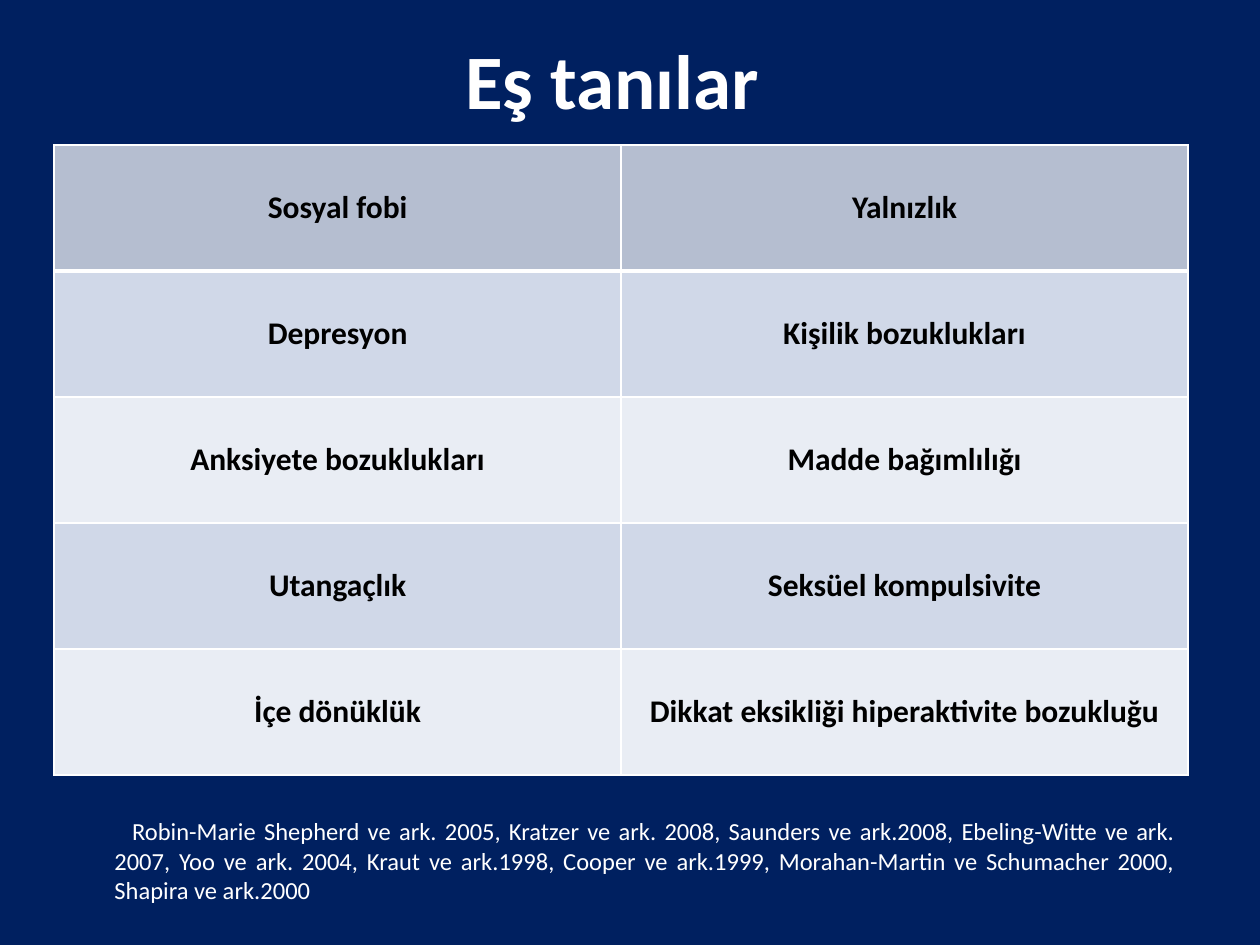
from dataclasses import dataclass

from lxml import etree
from pptx import Presentation
from pptx.dml.color import RGBColor
from pptx.enum import text
from pptx.oxml import ns
from pptx.slide import Slide
from pptx.util import Inches, Length, Pt

NAVY = RGBColor(0x00, 0x20, 0x60)
WHITE = RGBColor(0xFF, 0xFF, 0xFF)
BLACK = RGBColor(0x00, 0x00, 0x00)
BANDS = (RGBColor(0xE9, 0xED, 0xF4), RGBColor(0xD0, 0xD8, 0xE8))
FONT = "Calibri"
ALIGN = text.PP_ALIGN
MIDDLE = text.MSO_ANCHOR.MIDDLE

WIDE, HIGH = 10, 7.5
LEFT, SPAN = 0.043 * WIDE, 0.9 * WIDE
TOP, ROW = 1.15, 1

PAIRS = (
    ("Sosyal fobi", "Yalnızlık"),
    ("Depresyon", "Kişilik bozuklukları"),
    ("Anksiyete bozuklukları", "Madde bağımlılığı"),
    ("Utangaçlık", "Seksüel kompulsivite"),
    ("İçe dönüklük", "Dikkat eksikliği hiperaktivite bozukluğu"),
)
SOURCES = (
    "Robin-Marie Shepherd ve ark. 2005, Kratzer ve ark. 2008, "
    "Saunders ve ark.2008, Ebeling-Witte ve ark. 2007, Yoo ve ark. 2004, "
    "Kraut ve ark.1998, Cooper ve ark.1999, "
    "Morahan-Martin ve Schumacher 2000, Shapira ve ark.2000"
)


@dataclass(frozen=True)
class Style:
    size: int
    color: RGBColor
    bold: bool = False
    align: ALIGN = ALIGN.CENTER


@dataclass(frozen=True)
class Block:
    words: str
    top: float
    high: float
    style: Style
    anchor: text.MSO_ANCHOR = text.MSO_ANCHOR.TOP
    margin: float = 0
    indent: float = 0


TITLE = Block("Eş tanılar ", 0, HIGH / 6, Style(44, WHITE, True), MIDDLE)
NOTE = Block(SOURCES, 6.43, HIGH - 6.43, Style(14, WHITE, align=ALIGN.JUSTIFY),
             margin=0.38, indent=0.14)
LABEL = Style(18, BLACK, True)


def write(frame, words: str, style: Style):
    frame.text = words
    par = frame.paragraphs[0]
    par.alignment = style.align
    font = par.font
    font.name, font.size, font.bold = FONT, Pt(style.size), style.bold
    font.color.rgb = style.color
    return par


def place(slide: Slide, block: Block) -> None:
    box = slide.shapes.add_textbox(
        *map(Inches, (LEFT, block.top, SPAN, block.high)))
    frame = box.text_frame
    frame.word_wrap = True
    frame.vertical_anchor = block.anchor
    par = write(frame, block.words, block.style)
    props = par._p.get_or_add_pPr()
    props.set("marL", str(Inches(block.margin)))
    props.set("indent", str(Inches(block.indent)))


def edge(cell, side: str, width: Length) -> None:
    line = etree.Element(ns.qn(f"a:ln{side}"), w=str(width))
    fill = etree.SubElement(line, ns.qn("a:solidFill"))
    etree.SubElement(fill, ns.qn("a:srgbClr"), val=str(WHITE))
    cell._tc.get_or_add_tcPr().append(line)


def paint(cell, row: int) -> None:
    for side in "LRTB":
        thick = (row, side) in ((0, "B"), (1, "T"))
        edge(cell, side, Pt(3 if thick else 1))
    cell.fill.solid()
    cell.fill.fore_color.rgb = BANDS[row % 2] if row else WHITE
    if row == 0:
        tint = cell._tc.tcPr.find(".//" + ns.qn("a:solidFill") + "[last()]")
        tint = cell._tc.tcPr.find(ns.qn("a:solidFill"))[0]
        etree.SubElement(tint, ns.qn("a:alpha"), val="71000")


def grid(slide: Slide) -> None:
    rows, cols = len(PAIRS), len(PAIRS[0])
    table = slide.shapes.add_table(
        rows, cols, *map(Inches, (LEFT, TOP, SPAN, ROW * rows))).table
    for row, pair in enumerate(PAIRS):
        for col, words in enumerate(pair):
            cell = table.cell(row, col)
            cell.vertical_anchor = MIDDLE
            write(cell.text_frame, words, LABEL)
            paint(cell, row)


def main() -> None:
    deck = Presentation()
    deck.slide_width, deck.slide_height = Inches(WIDE), Inches(HIGH)
    slide = deck.slides.add_slide(deck.slide_layouts[6])
    back = slide.background.fill
    back.solid()
    back.fore_color.rgb = NAVY
    place(slide, TITLE)
    grid(slide)
    place(slide, NOTE)
    deck.save("out.pptx")


if __name__ == "__main__":
    main()
